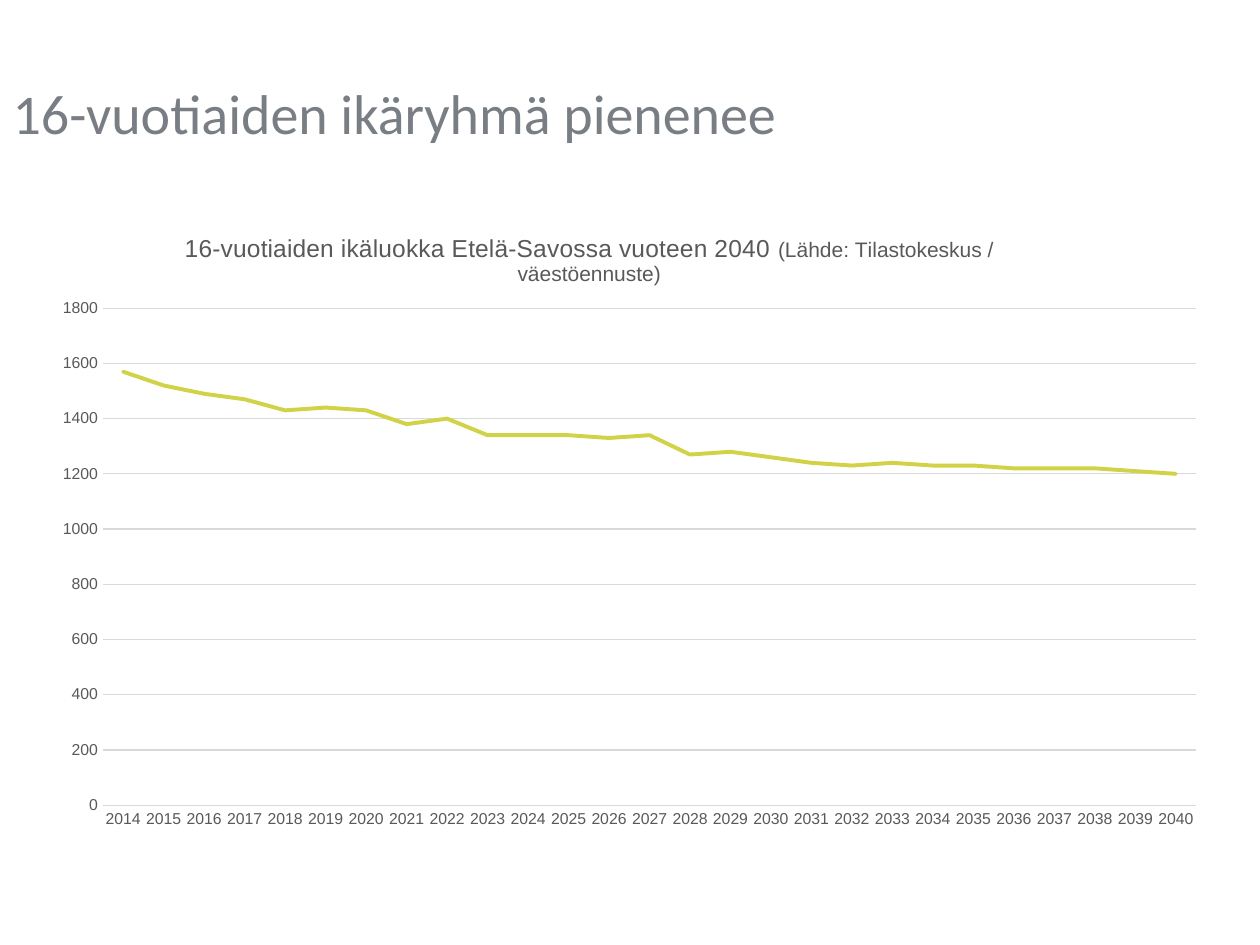
from pptx import Presentation
from pptx.chart.data import CategoryChartData
from pptx.dml.color import RGBColor
from pptx.enum.chart import XL_CHART_TYPE as ChartType, XL_TICK_MARK as Tick
from pptx.enum.text import MSO_ANCHOR as Anchor, PP_ALIGN as Align
from pptx.oxml import parse_xml
from pptx.oxml.ns import nsdecls
from pptx.util import Cm, Pt

TITLE_GREY = RGBColor(0x78, 0x7E, 0x84)
TEXT_GREY = RGBColor(0x59, 0x59, 0x59)
GRID_GREY = RGBColor(0xD9, 0xD9, 0xD9)
LIME = RGBColor(0xD2, 0xD2, 0x49)

YEARS = [str(year) for year in range(2014, 2041)]
AGE_GROUP = [1570, 1520, 1490, 1470, 1430, 1440, 1430, 1380, 1400,
             1340, 1340, 1340, 1330, 1340, 1270, 1280, 1260, 1240,
             1230, 1240, 1230, 1230, 1220, 1220, 1220, 1210, 1200]
CHART_TITLE = [("16-vuotiaiden ikäluokka Etelä-Savossa vuoteen 2040 ", 14),
               ("(Lähde: Tilastokeskus / väestöennuste)", 12)]


def style_font(font, name, size, color):
    font.name, font.size, font.bold = name, Pt(size), False
    font.color.rgb = color


def style_line(line, color, width):
    line.color.rgb = color
    line.width = Pt(width)


def manual_layout(target=None, **fractions):
    """Build a chart layout from fractions of the chart's size."""
    inner = f'<c:layoutTarget val="{target}"/>' if target else ""
    modes = "".join(f'<c:{k}Mode val="edge"/>' for k in ("x", "y"))
    sizes = "".join(f'<c:{k} val="{v}"/>' for k, v in fractions.items())
    return parse_xml(f'<c:layout {nsdecls("c")}><c:manualLayout>{inner}{modes}'
                     f'{sizes}</c:manualLayout></c:layout>')


def set_layout(element, layout, index):
    for old in element.findall(layout.tag):
        element.remove(old)
    element.insert(index, layout)


def add_title(slide, left, top, width, height):
    sp = slide.shapes.title
    sp.left, sp.top, sp.width, sp.height = left, top, width, height
    tf = sp.text_frame
    tf.word_wrap = True
    tf.vertical_anchor = Anchor.MIDDLE
    tf.margin_bottom = Cm(1.34)
    p = tf.paragraphs[0]
    p.alignment = Align.LEFT
    r = p.add_run()
    r.text = "16-vuotiaiden ikäryhmä pienenee"
    style_font(r.font, "Calibri", 32, TITLE_GREY)


def add_chart_title(chart):
    title = chart.chart_title
    p = title.text_frame.paragraphs[0]
    p.alignment = Align.CENTER
    for text, size in CHART_TITLE:
        r = p.add_run()
        r.text = text
        style_font(r.font, "Arial", size, TEXT_GREY)
    title.include_in_layout = False
    set_layout(title._element, manual_layout(x=0.12, y=0.04), 1)


def style_axes(chart):
    for axis in (chart.category_axis, chart.value_axis):
        axis.major_tick_mark = axis.minor_tick_mark = Tick.NONE
        style_font(axis.tick_labels.font, "Arial", 9, TEXT_GREY)
    style_line(chart.category_axis.format.line, GRID_GREY, 0.75)
    values = chart.value_axis
    values.minimum_scale, values.maximum_scale, values.major_unit = 0, 1800, 200
    values.format.line.fill.background()
    style_line(values.major_gridlines.format.line, GRID_GREY, 0.75)
    values.tick_labels.number_format = "0"
    values.tick_labels.number_format_is_linked = False


def add_age_chart(slide, left, top, width, height):
    data = CategoryChartData(number_format="0")
    data.categories = YEARS
    data.add_series("Series 1", AGE_GROUP)
    chart = slide.shapes.add_chart(ChartType.LINE, left, top, width, height,
                                   data).chart
    chart.has_legend = False
    chart.font.name, chart.font.size = "Arial", Pt(10)
    add_chart_title(chart)
    style_axes(chart)
    plot = chart.plots[0]
    plot.vary_by_categories = False
    series = plot.series[0]
    series.smooth = False
    style_line(series.format.line, LIME, 2.25)
    series.format.line._get_or_add_ln().set("cap", "rnd")
    set_layout(chart._chartSpace.chart.plotArea,
               manual_layout("inner", x=0.054, y=0.164, w=0.926, h=0.781), 0)


def main():
    prs = Presentation()
    prs.slide_width, prs.slide_height = Cm(25.4), Cm(19.05)
    slide = prs.slides.add_slide(prs.slide_layouts[5])
    add_title(slide, Cm(0), Cm(1.02), Cm(21.89), Cm(3.68))
    add_age_chart(slide, Cm(0.79), Cm(4.11), Cm(23.8), Cm(12.83))
    prs.save("out.pptx")


if __name__ == "__main__":
    main()
